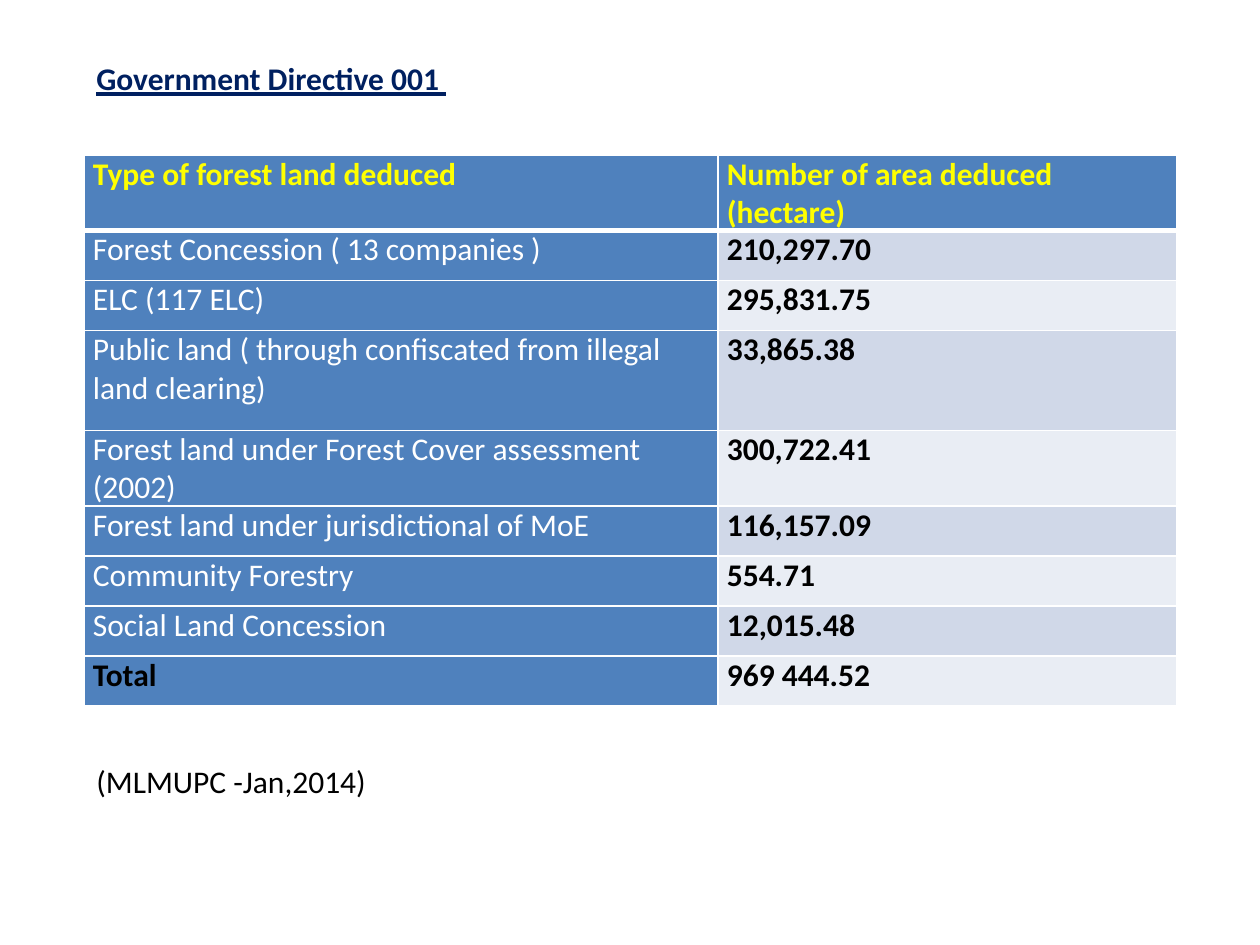
import pptx
import pptx.util
import pptx.dml.color
import pptx.enum.text
import pptx.oxml.ns
import lxml.etree

RGBColor = pptx.dml.color.RGBColor
ALIGN = pptx.enum.text.PP_ALIGN

PX = pptx.util.Inches(1) / 126
FONT = "Calibri"

NAVY = RGBColor(0x00, 0x20, 0x60)
BLUE = RGBColor(0x4F, 0x81, 0xBD)
BAND_DARK = RGBColor(0xD0, 0xD8, 0xE8)
BAND_LIGHT = RGBColor(0xE9, 0xED, 0xF4)
YELLOW = RGBColor(0xFF, 0xFF, 0x00)
WHITE = RGBColor(0xFF, 0xFF, 0xFF)
BLACK = RGBColor(0x00, 0x00, 0x00)

COLUMN_WIDTHS = (634, 459)
ROW_HEIGHT = 50
TALL_ROW = 3
CELL_INSET = 9
HEADINGS = ("Type of forest land deduced", "Number of area deduced (hectare)")
AREAS = (
    ("Forest Concession ( 13 companies )", "210,297.70"),
    ("ELC (117 ELC)", "295,831.75"),
    ("Public land ( through confiscated from illegal land clearing)", "33,865.38"),
    ("Forest land under Forest Cover assessment (2002)", "300,722.41"),
    ("Forest land under jurisdictional of MoE", "116,157.09"),
    ("Community Forestry", "554.71"),
    ("Social Land Concession", "12,015.48"),
    ("Total", "969 444.52"),
)


def emu(px):
    return pptx.util.Emu(round(px * PX))


def write(frame, text, color=BLACK, bold=False, underline=False, align=ALIGN.LEFT):
    para = frame.paragraphs[0]
    para.alignment = align
    span = para.add_run()
    span.text = text
    span.font.name = FONT
    span.font.size = pptx.util.Pt(18)
    span.font.bold = bold
    span.font.underline = underline
    span.font.color.rgb = color


def add_label(page, left, top, width, height, text, **style):
    box = page.shapes.add_textbox(emu(left), emu(top), emu(width), emu(height))
    box.text_frame.word_wrap = False
    box.text_frame.auto_size = pptx.enum.text.MSO_AUTO_SIZE.SHAPE_TO_FIT_TEXT
    write(box.text_frame, text, **style)


def set_borders(cell, top=1, bottom=1):
    """Give the cell white borders, with widths in points; call before filling."""
    qn = pptx.oxml.ns.qn
    properties = cell._tc.get_or_add_tcPr()
    for side, points in (("L", 1), ("R", 1), ("T", top), ("B", bottom)):
        line = lxml.etree.SubElement(
            properties, qn(f"a:ln{side}"), w=str(pptx.util.Pt(points)))
        fill = lxml.etree.SubElement(line, qn("a:solidFill"))
        lxml.etree.SubElement(fill, qn("a:srgbClr"), val=str(WHITE))


def fill_cell(cell, text, fill, top=1, bottom=1, **style):
    set_borders(cell, top, bottom)
    cell.fill.solid()
    cell.fill.fore_color.rgb = fill
    cell.margin_left = cell.margin_right = emu(CELL_INSET)
    cell.margin_top = cell.margin_bottom = 0
    write(cell.text_frame, text, **style)


def add_area_table(page, left, top):
    row_count = len(AREAS) + 1
    table = page.shapes.add_table(
        row_count, len(COLUMN_WIDTHS), emu(left), emu(top),
        emu(sum(COLUMN_WIDTHS)), emu(ROW_HEIGHT * (row_count + 1))).table
    for column, width in zip(table.columns, COLUMN_WIDTHS):
        column.width = emu(width)
    for index, row in enumerate(table.rows):
        row.height = emu(ROW_HEIGHT * (2 if index == TALL_ROW else 1))

    for index, (heading, align) in enumerate(zip(HEADINGS, (ALIGN.JUSTIFY, ALIGN.LEFT))):
        fill_cell(table.cell(0, index), heading, BLUE, bottom=3,
                  color=YELLOW, bold=True, align=align)
    for index, (land, hectares) in enumerate(AREAS, start=1):
        line_above = 3 if index == 1 else 1
        is_total = index == len(AREAS)
        fill_cell(table.cell(index, 0), land, BLUE, top=line_above,
                  color=BLACK if is_total else WHITE, bold=is_total,
                  align=ALIGN.JUSTIFY if is_total else ALIGN.LEFT)
        fill_cell(table.cell(index, 1), hectares,
                  BAND_DARK if index % 2 else BAND_LIGHT, top=line_above,
                  bold=True, align=ALIGN.JUSTIFY)


def main():
    deck = pptx.Presentation()
    deck.slide_width, deck.slide_height = emu(1260), emu(945)
    page = deck.slides.add_slide(deck.slide_layouts[6])
    add_label(page, 84, 53, 379, 50, "Government Directive 001 ",
              color=NAVY, bold=True, underline=True)
    add_area_table(page, 84, 155)
    add_label(page, 84, 756, 306, 50, "(MLMUPC -Jan,2014)")
    deck.save("out.pptx")


if __name__ == "__main__":
    main()
